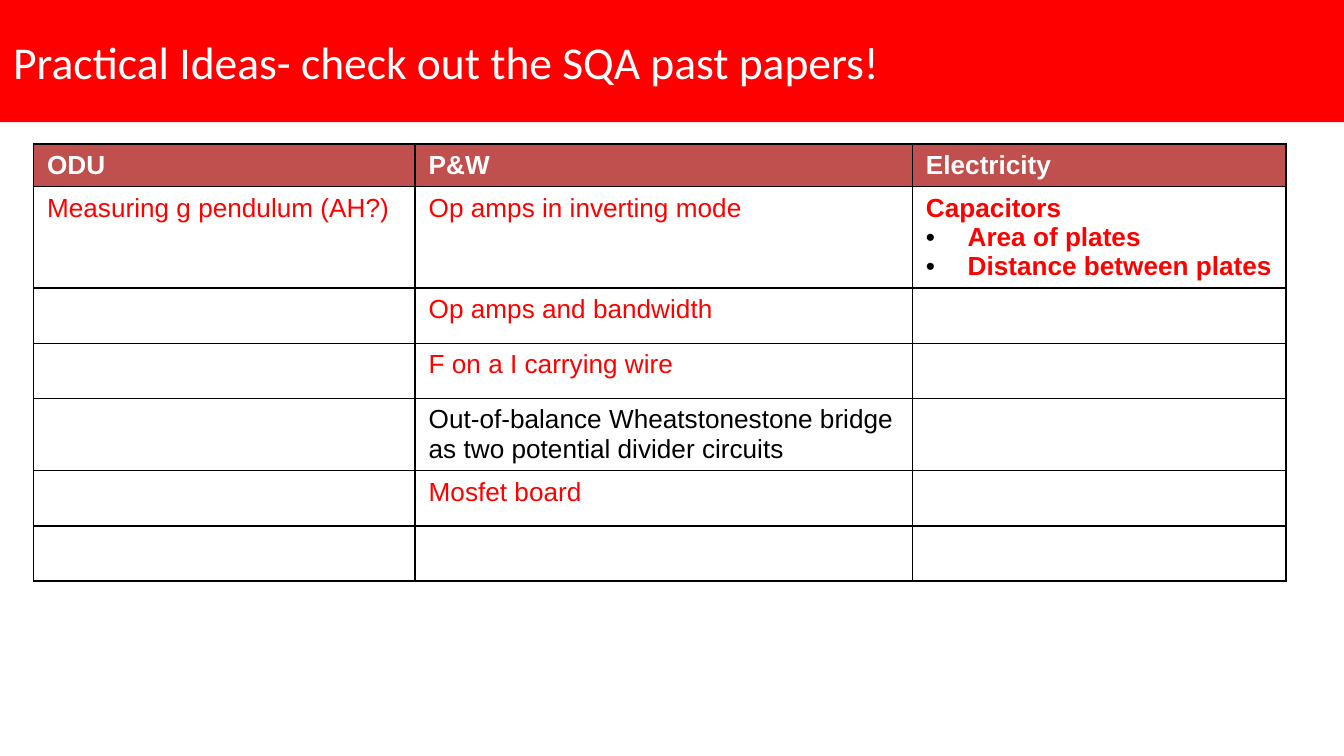
from lxml.etree import SubElement as Sub
from pptx import Presentation
from pptx.dml.color import RGBColor as RGB
from pptx.enum.shapes import MSO_SHAPE as Shape
from pptx.enum.text import MSO_ANCHOR as Anchor, PP_ALIGN as Align
from pptx.oxml.ns import qn
from pptx.util import Inches, Pt

WIDE = 10
HIGH = WIDE * 9 / 16
COLORS = {"red": "FF0000", "brick": "C0504D", "white": "FFFFFF", "black": "000000"}

HEADS = ["ODU", "P&W", "Electricity"]
# Each cell: lines of text, colour, bold; lines after the first are bullets.
IDEAS = [
    [(["Measuring g pendulum (AH?)"], "red", False),
     (["Op amps in inverting mode"], "red", False),
     (["Capacitors", "Area of plates", "Distance between plates"], "red", True)],
    [None, (["Op amps and bandwidth"], "red", False), None],
    [None, (["F on a I carrying wire"], "red", False), None],
    [None, (["Out-of-balance Wheatstonestone bridge as two potential divider circuits"],
            "black", False), None],
    [None, (["Mosfet board"], "red", False), None],
    [None, None, None],
]


class Deck:
    def __init__(self):
        self.prs = Presentation()
        self.prs.slide_width, self.prs.slide_height = Inches(WIDE), Inches(HIGH)
        self.slide = self.prs.slides.add_slide(self.prs.slide_layouts[6])

    def area(self, left, top, width, height):
        """Turn shares of the slide's size into lengths."""
        across, down = self.prs.slide_width, self.prs.slide_height
        return int(left * across), int(top * down), int(width * across), int(height * down)

    def style(self, para, color, size, face, bold=False):
        for run in para.runs:
            font = run.font
            font.name, font.size, font.bold = face, Pt(size), bold
            font.color.rgb = RGB.from_string(COLORS[color])

    def banner(self, text, height):
        bar = self.slide.shapes.add_shape(Shape.RECTANGLE, *self.area(0, 0, 1, height))
        bar.shadow.inherit = False
        bar.fill.solid()
        bar.fill.fore_color.rgb = RGB.from_string(COLORS["red"])
        bar.line.fill.background()
        frame = bar.text_frame
        frame.vertical_anchor = Anchor.MIDDLE
        frame.text = text
        para = frame.paragraphs[0]
        para.alignment = Align.LEFT
        self.style(para, "white", 24.4, "Calibri")

    def bullet(self, para):
        props = para._p.get_or_add_pPr()
        props.set("marL", str(Inches(0.31)))
        props.set("indent", str(Inches(-0.31)))
        tint = Sub(props, qn("a:buClr"))
        Sub(tint, qn("a:srgbClr"), val=COLORS["black"])
        Sub(props, qn("a:buFont"), typeface="Arial")
        Sub(props, qn("a:buChar"), char="•")

    def border(self, cell):
        props = cell._tc.get_or_add_tcPr()
        for side in "LRTB":
            line = Sub(props, qn(f"a:ln{side}"), w=str(Pt(1)))
            fill = Sub(line, qn("a:solidFill"))
            Sub(fill, qn("a:srgbClr"), val=COLORS["black"])

    def cell(self, cell, entry, back):
        self.border(cell)
        cell.fill.solid()
        cell.fill.fore_color.rgb = RGB.from_string(COLORS[back])
        if not entry:
            return
        lines, color, bold = entry
        cell.text_frame.text = "\n".join(lines)
        for i, para in enumerate(cell.text_frame.paragraphs):
            if i:
                self.bullet(para)
            self.style(para, color, 14, "Arial", bold)

    def table(self, heads, rows, place, widths, heights):
        grid = [[([head], "white", True) for head in heads]] + rows
        table = self.slide.shapes.add_table(len(grid), len(heads), *self.area(*place)).table
        table.first_row = table.horz_banding = False
        for col, width in zip(table.columns, widths):
            col.width = Inches(width)
        for row, height in zip(table.rows, heights):
            row.height = Inches(height)
        for r, row in enumerate(grid):
            for c, entry in enumerate(row):
                self.cell(table.cell(r, c), entry, "white" if r else "brick")


def main():
    deck = Deck()
    deck.banner("Practical Ideas- check out the SQA past papers!", 0.91 / HIGH)
    widths = [2.84, 3.7, 2.78]
    heights = [0.24] + [0.41] * len(IDEAS)
    place = 0.25 / WIDE, 1.07 / HIGH, sum(widths) / WIDE, sum(heights) / HIGH
    deck.table(HEADS, IDEAS, place, widths, heights)
    deck.prs.save("out.pptx")


if __name__ == "__main__":
    main()
